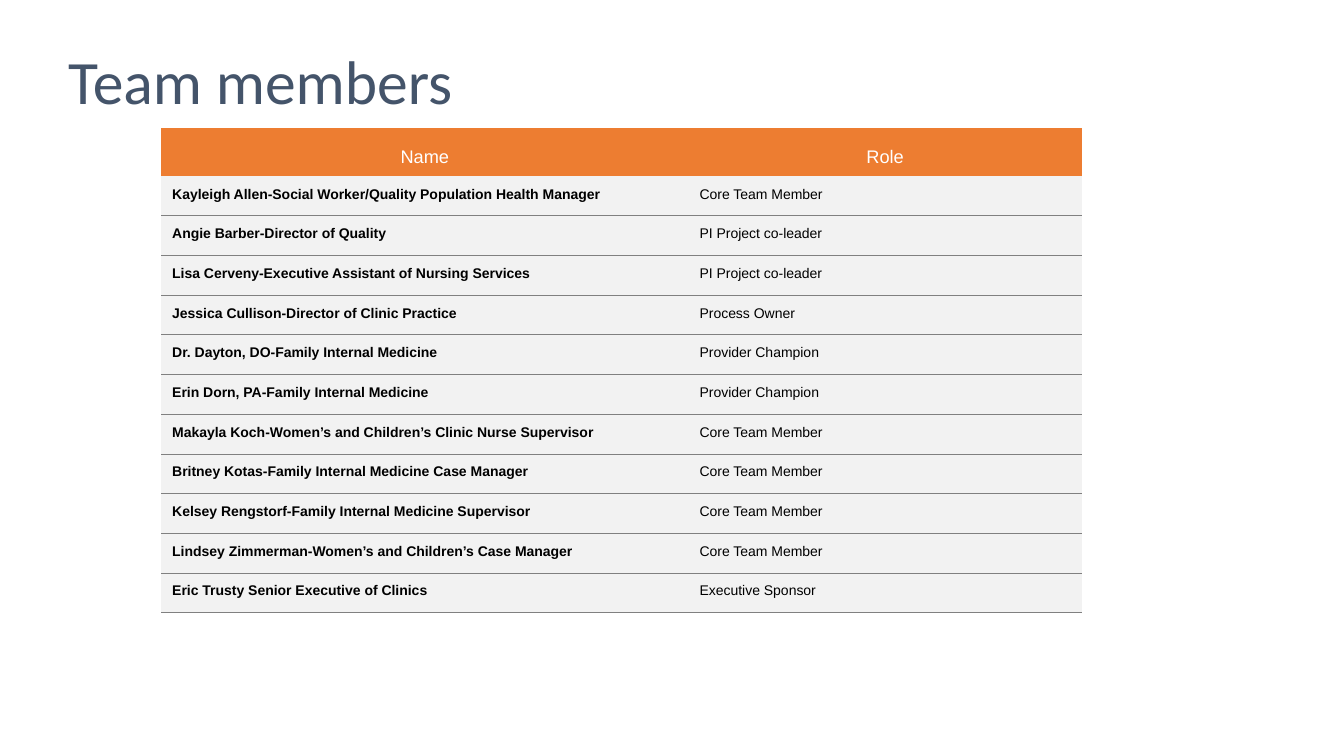
from pptx import Presentation
from pptx.dml.color import RGBColor
from pptx.enum.text import MSO_ANCHOR, PP_ALIGN
from pptx.oxml import parse_xml
from pptx.oxml.ns import nsdecls, qn
from pptx.util import Cm, Pt

MIDDLE, TOP = MSO_ANCHOR.MIDDLE, MSO_ANCHOR.TOP
CENTER, LEFT = PP_ALIGN.CENTER, PP_ALIGN.LEFT
NO_STYLE = "{2D5ABB26-0587-4C30-8999-92F81FD0307C}"
COLORS = {
    "title": "44546A",
    "header": "ED7D31",
    "header_text": "FFFFFF",
    "body": "F2F2F2",
    "body_text": "000000",
    "rule": "808080",
}
MEMBERS = [
    ("Kayleigh Allen-Social Worker/Quality Population Health Manager", "Core Team Member"),
    ("Angie Barber-Director of Quality", "PI Project co-leader"),
    ("Lisa Cerveny-Executive Assistant of Nursing Services", "PI Project co-leader"),
    ("Jessica Cullison-Director of Clinic Practice", "Process Owner"),
    ("Dr. Dayton, DO-Family Internal Medicine", "Provider Champion"),
    ("Erin Dorn, PA-Family Internal Medicine", "Provider Champion"),
    ("Makayla Koch-Women’s and Children’s Clinic Nurse Supervisor", "Core Team Member"),
    ("Britney Kotas-Family Internal Medicine Case Manager", "Core Team Member"),
    ("Kelsey Rengstorf-Family Internal Medicine Supervisor", "Core Team Member"),
    ("Lindsey Zimmerman-Women’s and Children’s Case Manager", "Core Team Member"),
    ("Eric Trusty Senior Executive of Clinics", "Executive Sponsor"),
]


class TeamPage:
    """Holds the style and the current slide, and adds its elements."""

    def __init__(self, page, colors):
        self.page = page
        self.colors = colors

    def color(self, name):
        return RGBColor.from_string(self.colors[name])

    def text(self, frame, words, font, size, color, bold=False, align=LEFT, spacing=1.15):
        frame.text = words
        para = frame.paragraphs[0]
        para.alignment = align
        para.line_spacing = spacing
        span = para.runs[0]
        span.font.name = font
        span.font.size = Pt(size)
        span.font.bold = bold
        span.font.color.rgb = self.color(color)

    def title(self, words, left, top, width, height):
        box = self.page.shapes.add_textbox(Cm(left), Cm(top), Cm(width), Cm(height))
        box.text_frame.word_wrap = True
        self.text(box.text_frame, words, "Calibri", 44, "title", spacing=0.9)

    def cell(self, cell, words, fill, anchor, **style):
        cell.margin_left = cell.margin_right = Cm(0.28)
        cell.margin_top, cell.margin_bottom = Cm(0.2), Cm(0)
        cell.vertical_anchor = anchor
        cell.fill.solid()
        cell.fill.fore_color.rgb = self.color(fill)
        self.text(cell.text_frame, words, "Arial", **style)

    def rule_below(self, cell):
        line = parse_xml(
            f'<a:lnB {nsdecls("a")} w="{Pt(0.75)}"><a:solidFill>'
            f'<a:srgbClr val="{self.colors["rule"]}"/></a:solidFill></a:lnB>'
        )
        cell._tc.get_or_add_tcPr().insert(0, line)

    def table(self, headings, records, left, top, widths, header_height, row_height):
        height = header_height + row_height * len(records)
        frame = self.page.shapes.add_table(
            len(records) + 1, len(widths), Cm(left), Cm(top), Cm(sum(widths)), Cm(height)
        )
        for style_id in frame.element.iter(qn("a:tableStyleId")):
            style_id.text = NO_STYLE
        table = frame.table
        table.horz_banding = False
        for column, width in zip(table.columns, widths):
            column.width = Cm(width)
        for row in table.rows:
            row.height = Cm(row_height)
        table.rows[0].height = Cm(header_height)
        for column, heading in enumerate(headings):
            self.cell(table.cell(0, column), heading, "header", MIDDLE,
                      size=13, color="header_text", align=CENTER)
        for row, record in enumerate(records, start=1):
            for column, words in enumerate(record):
                cell = table.cell(row, column)
                self.cell(cell, words, "body", TOP,
                          size=10, color="body_text", bold=column == 0)
                self.rule_below(cell)


def main():
    deck = Presentation()
    deck.slide_width, deck.slide_height = Cm(33.87), Cm(19.05)
    page = TeamPage(deck.slides.add_slide(deck.slide_layouts[6]), COLORS)
    page.title("Team members", 1.47, 1.17, 13.94, 3.3)
    page.table(("Name", "Role"), MEMBERS, 4.06, 3.23, (13.29, 9.91), 1.21, 1)
    deck.save("out.pptx")


if __name__ == "__main__":
    main()
